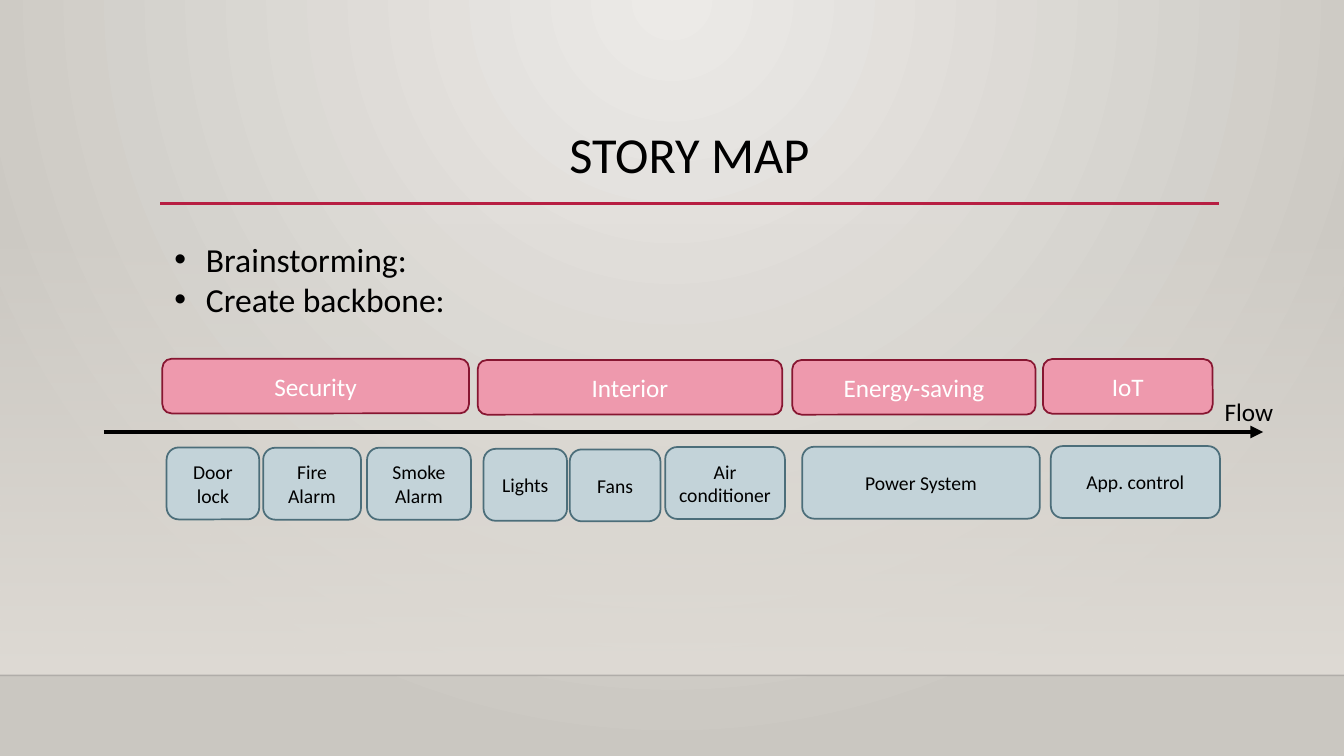
from lxml.etree import SubElement
from pptx import Presentation
from pptx.dml.color import RGBColor
from pptx.enum.shapes import MSO_CONNECTOR, MSO_SHAPE
from pptx.enum.text import MSO_ANCHOR, MSO_AUTO_SIZE, PP_ALIGN
from pptx.oxml.ns import qn
from pptx.util import Pt

COLORS = {
    "light": "ECEAE7", "dark": "CAC7C1", "wall": "DFDBD5",
    "edge": "000001", "rule": "B71E42", "ink": "000000", "white": "FFFFFF",
    "pink": "EE99AD", "wine": "871631", "mist": "C3D3D9", "slate": "4C6E7A",
}
WIDE, HIGH = 960, 540
FLOOR = 482.4

# Backbone activities and their stories: text, left, top, width
THEMES = [
    ("Security", 116, 256.3, 219),
    ("Interior", 341.2, 257.2, 217.5),
    ("Energy-saving", 565.9, 257.2, 173.8),
    ("IoT", 745, 256.5, 121.2),
]
TASKS = [
    ("Door\nlock", 119, 319.6, 66.2),
    ("Fire\nAlarm", 188, 319.8, 69.9),
    ("Smoke\nAlarm", 262.2, 319.8, 74.2),
    ("Lights", 345.4, 320.6, 59.6),
    ("Fans", 407, 321, 64.8),
    ("Air\nconditioner", 475.2, 319.3, 85.5),
    ("Power System", 573, 319.1, 169.8),
    ("App. control", 750.6, 318.6, 120.8),
]


class Board:
    font = "Calibri"

    def __init__(self, slide):
        self.slide = slide
        self.shapes = slide.shapes

    def color(self, name):
        return RGBColor.from_string(COLORS[name])

    def place(self, shape, left, top, width, height):
        shape.left, shape.top = Pt(left), Pt(top)
        shape.width, shape.height = Pt(width), Pt(height)

    def letter(self, shape, text, size, tone="ink", align=PP_ALIGN.LEFT):
        frame = shape.text_frame
        frame.text = text
        for para in frame.paragraphs:
            para.alignment = align
            para.font.name = self.font
            para.font.size = Pt(size)
            para.font.color.rgb = self.color(tone)
        return frame

    def blend(self, fill, root, stops):
        """Fill with a gradient; stops are (position, color, opacity)."""
        fill.gradient()
        grad = root.find(".//" + qn("a:gradFill"))
        grad.clear()
        group = SubElement(grad, qn("a:gsLst"))
        for pos, name, alpha in stops:
            stop = SubElement(group, qn("a:gs"), pos=str(pos * 1000))
            tint = SubElement(stop, qn("a:srgbClr"), val=COLORS[name])
            SubElement(tint, qn("a:alpha"), val=str(alpha * 1000))
        return grad

    def backdrop(self):
        stops = [(0, "light", 100), (100, "dark", 100)]
        grad = self.blend(self.slide.background.fill, self.slide.element, stops)
        way = SubElement(grad, qn("a:path"))
        way.set("path", "circle")
        SubElement(way, qn("a:fillToRect"), l="43000", t="0", r="43000", b="100000")

    def wall(self, top, base):
        rect = self.shapes.add_shape(
            MSO_SHAPE.RECTANGLE, 0, Pt(top), Pt(WIDE), Pt(base - top))
        rect.shadow.inherit = False
        rect.line.fill.background()
        stops = [(0, "wall", 0), (100, "wall", 100)]
        grad = self.blend(rect.fill, rect.element, stops)
        SubElement(grad, qn("a:lin"), ang="5400000", scaled="0")
        # Send behind the placeholders
        rect.element.getparent().insert(2, rect.element)

    def title(self, text, *box):
        shape = self.shapes.title
        self.place(shape, *box)
        frame = self.letter(shape, text, 36, align=PP_ALIGN.CENTER)
        frame.vertical_anchor = MSO_ANCHOR.TOP
        frame.auto_size = MSO_AUTO_SIZE.NONE
        frame.paragraphs[0].line_spacing = 0.9

    def bullets(self, lines, *box):
        shape = self.slide.placeholders[1]
        self.place(shape, *box)
        frame = self.letter(shape, "\n".join(lines), 24)
        frame.auto_size = MSO_AUTO_SIZE.NONE
        for para in frame.paragraphs:
            para.space_before = Pt(0)
            props = para._p.get_or_add_pPr()
            props.set("marL", str(Pt(22.5)))
            props.set("indent", str(-Pt(22.5)))

    def label(self, text, *box):
        shape = self.shapes.add_textbox(*map(Pt, box))
        frame = self.letter(shape, text, 18)
        frame.word_wrap = False
        frame.auto_size = MSO_AUTO_SIZE.SHAPE_TO_FIT_TEXT

    def line(self, left, right, y, name, weight, alpha=100, arrow=False):
        link = self.shapes.add_connector(
            MSO_CONNECTOR.STRAIGHT, Pt(left), Pt(y), Pt(right), Pt(y))
        link.line.width = Pt(weight)
        link.line.color.rgb = self.color(name)
        props = link.element.spPr
        tint = props.find(".//" + qn("a:srgbClr"))
        SubElement(tint, qn("a:alpha"), val=str(alpha * 1000))
        if arrow:
            SubElement(props.find(qn("a:ln")), qn("a:tailEnd"), type="triangle")
        SubElement(props, qn("a:effectLst"))

    def card(self, text, left, top, width, height, size, fill, edge, tone):
        shape = self.shapes.add_shape(
            MSO_SHAPE.ROUNDED_RECTANGLE, *map(Pt, (left, top, width, height)))
        shape.shadow.inherit = False
        shape.fill.solid()
        shape.fill.fore_color.rgb = self.color(fill)
        shape.line.color.rgb = self.color(edge)
        shape.line.width = Pt(1.25)
        frame = self.letter(shape, text, size, tone, PP_ALIGN.CENTER)
        frame.vertical_anchor = MSO_ANCHOR.MIDDLE


def main():
    deck = Presentation()
    deck.slide_width, deck.slide_height = Pt(WIDE), Pt(HIGH)
    board = Board(deck.slides.add_slide(deck.slide_layouts[1]))

    # Background and rules
    board.backdrop()
    board.wall(159, FLOOR)
    board.line(0, WIDE, FLOOR, "edge", 1, alpha=20)
    board.line(114.4, 870.9, 145.3, "rule", 2.5)

    # Title and list
    board.title("STORY MAP", 114.4, 89.3, 756, 82.8)
    board.bullets(["Brainstorming:", "Create backbone:"], 117.4, 167, 244, 65.5)

    # Flow arrow
    board.label("Flow", 867.6, 279.4, 50.4, 29)
    board.line(74.2, 902.2, 308.6, "ink", 3, arrow=True)

    # Story map
    for theme in THEMES:
        board.card(*theme, 39, 18, "pink", "wine", "white")
    for task in TASKS:
        board.card(*task, 51.4, 14, "mist", "slate", "ink")

    deck.save("out.pptx")


if __name__ == "__main__":
    main()
